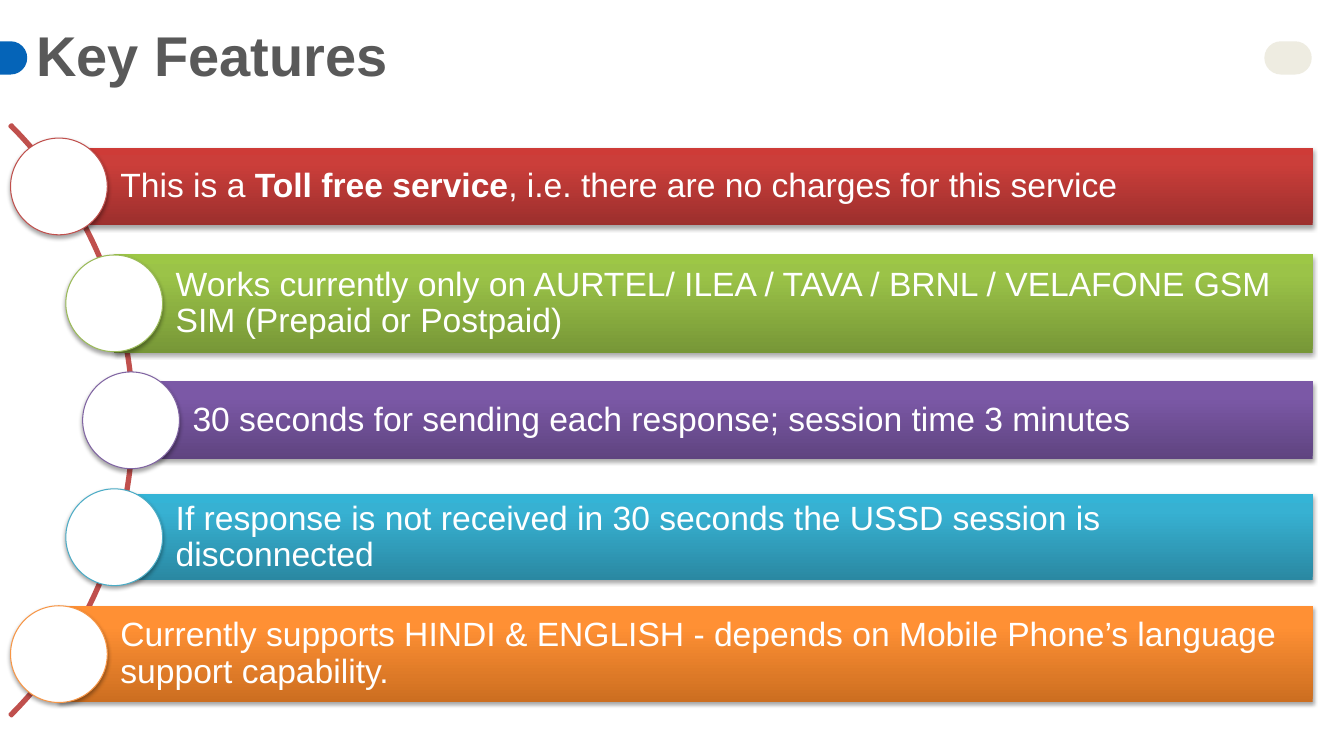
from copy import deepcopy
from math import sqrt

from lxml.etree import SubElement
from pptx import Presentation
from pptx.dml.color import RGBColor
from pptx.enum.shapes import MSO_SHAPE as Shape
from pptx.enum.text import MSO_ANCHOR as Anchor, PP_ALIGN as Align
from pptx.oxml.ns import qn
from pptx.util import Inches, Pt

WHITE = RGBColor(0xFF, 0xFF, 0xFF)
GREY = RGBColor(0x59, 0x59, 0x59)
BLUE = RGBColor(0x05, 0x64, 0xB8)
BEIGE = RGBColor(0xEE, 0xEC, 0xE1)
RED = RGBColor(0xC0, 0x50, 0x4D)
GREEN = RGBColor(0x9B, 0xBB, 0x59)
PURPLE = RGBColor(0x80, 0x64, 0xA2)
AQUA = RGBColor(0x4B, 0xAC, 0xC6)
ORANGE = RGBColor(0xF7, 0x96, 0x46)

# Bar gradients, from bottom to top
RED_FADE = RGBColor(0x9C, 0x2F, 0x2D), RGBColor(0xCB, 0x3E, 0x3A), RGBColor(0xCE, 0x3B, 0x37)
GREEN_FADE = RGBColor(0x77, 0x97, 0x37), RGBColor(0x9B, 0xC3, 0x48), RGBColor(0x9D, 0xC7, 0x46)
PURPLE_FADE = RGBColor(0x5F, 0x44, 0x80), RGBColor(0x7B, 0x58, 0xA6), RGBColor(0x7C, 0x57, 0xA8)
AQUA_FADE = RGBColor(0x2A, 0x88, 0xA2), RGBColor(0x37, 0xB1, 0xD2), RGBColor(0x34, 0xB4, 0xD6)
ORANGE_FADE = RGBColor(0xCC, 0x6E, 0x20), RGBColor(0xFF, 0x90, 0x34), RGBColor(0xFF, 0x91, 0x36)

# Outline colour, gradient, bar height, runs of (text, bold)
FEATURES = [
    (RED, RED_FADE, 0.77, [("This is a ", False), ("Toll free service", True),
                           (", i.e. there are no charges for this service", False)]),
    (GREEN, GREEN_FADE, 0.98, [("Works currently only on AURTEL/ ILEA / TAVA / BRNL / VELAFONE GSM "
                                "SIM (Prepaid or Postpaid)", False)]),
    (PURPLE, PURPLE_FADE, 0.77, [("30 seconds for sending each response; session time 3 minutes",
                                  False)]),
    (AQUA, AQUA_FADE, 0.85, [("If response is not received in 30 seconds the USSD session is "
                              "disconnected", False)]),
    (ORANGE, ORANGE_FADE, 0.95, [("Currently supports HINDI & ENGLISH - depends on Mobile Phone’s "
                                  "language support capability.", False)]),
]
ARC_X, ARC_Y, ARC_SIZE = -2.82, 4.17, 8.3
TRACK_RADIUS = 4.12
ROW_STEP = 1.16
CIRCLE = 0.96
BAR_RIGHT = 13.02


class FeatureSlide:
    font = "Arial"

    def __init__(self, slide):
        self.shapes = slide.shapes

    def shape(self, kind, left, top, width, height, fill=None, line=None, weight=0.75):
        item = self.shapes.add_shape(kind, Inches(left), Inches(top), Inches(width), Inches(height))
        item.shadow.inherit = False
        if fill is None:
            item.fill.background()
        else:
            item.fill.solid()
            item.fill.fore_color.rgb = fill
        if line is None:
            item.line.fill.background()
        else:
            item.line.color.rgb = line
            item.line.width = Pt(weight)
        return item

    def pill(self, left, width, fill):
        self.shape(Shape.ROUNDED_RECTANGLE, left, 0.41, width, 0.33, fill).adjustments[0] = 0.5

    def drop_shadow(self, item):
        effects = item._element.spPr.find(qn("a:effectLst"))
        shadow = SubElement(effects, qn("a:outerShdw"), blurRad=str(Pt(3.1)), dist=str(Pt(1.8)),
                            dir="5400000", rotWithShape="0")
        black = SubElement(shadow, qn("a:srgbClr"), val="000000")
        SubElement(black, qn("a:alpha"), val="35000")

    def fade(self, item, colors):
        item.fill.gradient()
        item.fill.gradient_angle = 90
        stop_list = item._element.spPr.find(qn("a:gradFill")).find(qn("a:gsLst"))
        stop_list.append(deepcopy(stop_list[0]))
        for stop, position, color in zip(item.fill.gradient_stops, (0, 0.8, 1), colors):
            stop.position = position
            stop.color.rgb = color

    def put_text(self, frame, runs, size, color, bold=None):
        frame.word_wrap = True
        paragraph = frame.paragraphs[0]
        paragraph.alignment = Align.LEFT
        paragraph.font.name = self.font
        paragraph.font.size = Pt(size)
        paragraph.font.color.rgb = color
        paragraph.font.bold = bold
        for text, strong in runs:
            run = paragraph.add_run()
            run.text = text
            if strong:
                run.font.bold = True
        return paragraph

    def title(self, text):
        box = self.shapes.add_textbox(Inches(0.36), Inches(0.2), Inches(11.92), Inches(0.82))
        frame = box.text_frame
        frame.margin_left = frame.margin_right = frame.margin_top = frame.margin_bottom = 0
        self.put_text(frame, [(text, False)], 40, GREY, bold=True)

    def arc(self):
        half = ARC_SIZE / 2
        arc = self.shape(Shape.BLOCK_ARC, ARC_X - half, ARC_Y - half, ARC_SIZE, ARC_SIZE,
                         line=RED, weight=2)
        for index, value in enumerate((189, 27, 0.003)):
            arc.adjustments[index] = value

    def feature(self, x, y, outline, colors, height, runs):
        bar = self.shape(Shape.RECTANGLE, x, y - height / 2, BAR_RIGHT - x, height, WHITE)
        self.fade(bar, colors)
        self.drop_shadow(bar)
        frame = bar.text_frame
        frame.margin_left = Inches(0.61)
        frame.margin_right = frame.margin_top = frame.margin_bottom = Inches(0.07)
        frame.vertical_anchor = Anchor.MIDDLE
        self.put_text(frame, runs, 24, WHITE).line_spacing = 0.9
        circle = self.shape(Shape.OVAL, x - CIRCLE / 2, y - CIRCLE / 2, CIRCLE, CIRCLE,
                            WHITE, outline)
        self.drop_shadow(circle)


def main():
    deck = Presentation()
    deck.slide_width, deck.slide_height = Inches(13.33), Inches(7.5)
    page = FeatureSlide(deck.slides.add_slide(deck.slide_layouts[6]))

    # Header
    page.pill(12.54, 0.47, BEIGE)
    page.pill(-0.45, 0.72, BLUE)
    page.title("Key Features")

    # Features along the arc
    page.arc()
    for row, feature in enumerate(FEATURES):
        offset = (row - len(FEATURES) // 2) * ROW_STEP
        x = ARC_X + sqrt(TRACK_RADIUS ** 2 - offset ** 2)
        page.feature(x, ARC_Y + offset, *feature)

    deck.save("out.pptx")


if __name__ == "__main__":
    main()
